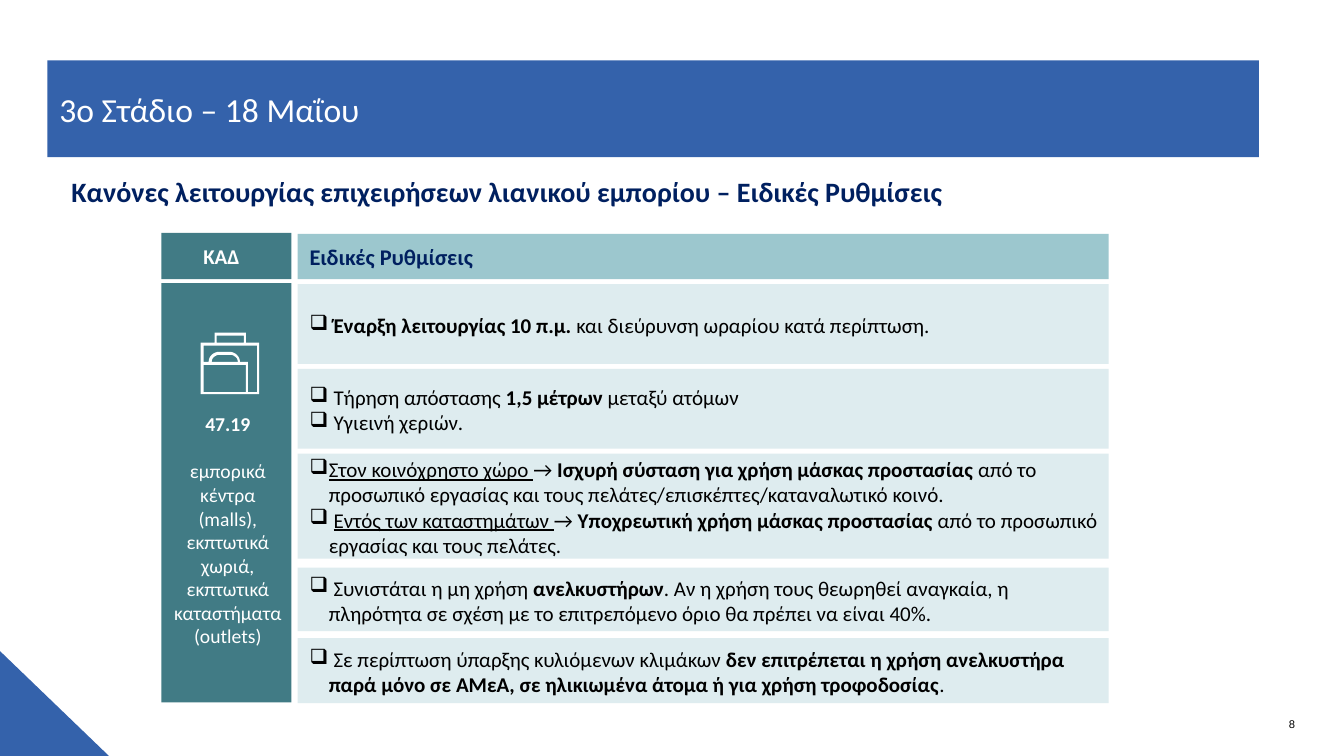
from math import cos, pi, sin

from lxml import etree
from pptx import Presentation
from pptx.dml.color import RGBColor
from pptx.enum.shapes import MSO_SHAPE
from pptx.enum.text import MSO_ANCHOR, PP_ALIGN
from pptx.oxml.ns import qn
from pptx.util import Pt

RECT, TRIANGLE = MSO_SHAPE.RECTANGLE, MSO_SHAPE.RIGHT_TRIANGLE
TOP, MIDDLE, BOTTOM = MSO_ANCHOR.TOP, MSO_ANCHOR.MIDDLE, MSO_ANCHOR.BOTTOM
LEFT, CENTER, RIGHT = PP_ALIGN.LEFT, PP_ALIGN.CENTER, PP_ALIGN.RIGHT

THEME = {
    "font": "Calibri", "number_font": "Arial",
    "blue": RGBColor(0x34, 0x62, 0xAB), "navy": RGBColor(0x00, 0x20, 0x60),
    "teal": RGBColor(0x41, 0x7B, 0x85), "aqua": RGBColor(0x9C, 0xC7, 0xCE),
    "pale": RGBColor(0xDE, 0xEC, 0xEF),
    "white": RGBColor(255, 255, 255), "black": RGBColor(0, 0, 0),
    "title": 24, "subtitle": 20, "header": 16, "body": 15, "code": 14, "number": 8,
}

prs = Presentation()
prs.slide_width, prs.slide_height = Pt(960), Pt(540)
slide = prs.slides.add_slide(prs.slide_layouts[5])


def add_box(kind, x, y, w, h, fill, insets=(0, 0, 0, 0), anchor=MIDDLE):
    """Add a filled shape, or a text box when kind is None; return the shape."""
    box = [Pt(v) for v in (x, y, w, h)]
    if kind is None:
        sp = slide.shapes.add_textbox(*box)
    else:
        sp = slide.shapes.add_shape(kind, *box)
        sp.shadow.inherit = False
        sp.fill.solid()
        sp.fill.fore_color.rgb = THEME[fill]
        sp.line.fill.background()
    tf = sp.text_frame
    tf.word_wrap = True
    tf.vertical_anchor = anchor
    tf.margin_left, tf.margin_top, tf.margin_right, tf.margin_bottom = map(Pt, insets)
    return sp


def add_run(p, text, size, color, bold=False, underline=False, font="font", align=LEFT):
    p.alignment = align
    r = p.add_run()
    r.text = text
    r.font.name = THEME[font]
    r.font.size = Pt(THEME[size])
    r.font.color.rgb = THEME[color]
    r.font.bold = bold
    r.font.underline = underline


# Corner triangle and page number
add_box(TRIANGLE, 0, 465.1, 77.8, 74.9, "blue")
number = add_box(None, 786.2, 511.2, 139, 10.8, None, anchor=BOTTOM)
add_run(number.text_frame.paragraphs[0], "8", "number", "black",
        font="number_font", align=RIGHT)

# Title banner with two snipped corners
title = slide.shapes.title
title.left, title.top, title.width, title.height = Pt(33.8), Pt(43.2), Pt(865.4), Pt(69.1)
geom = etree.SubElement(title._element.spPr, qn("a:prstGeom"), prst="snip2DiagRect")
etree.SubElement(geom, qn("a:avLst"))
title.fill.solid()
title.fill.fore_color.rgb = THEME["blue"]
tf = title.text_frame
tf.vertical_anchor = MIDDLE
tf.margin_left = tf.margin_right = Pt(8.6)
tf.margin_top = tf.margin_bottom = Pt(1.4)
add_run(tf.paragraphs[0], "3o Στάδιο – 18 Μαΐου", "title", "white")

# Subtitle
subtitle = add_box(None, 43.9, 121, 844.6, 31.7, None, (7.2, 3.6, 7.2, 3.6), TOP)
add_run(subtitle.text_frame.paragraphs[0],
        "Κανόνες λειτουργίας επιχειρήσεων λιανικού εμπορίου – Ειδικές Ρυθμίσεις",
        "subtitle", "navy", bold=True)

# Column headers
CODE_X, CODE_W = 115.2, 92.9
RULES_X, RULES_W = 212.6, 579.4
code_head = add_box(RECT, CODE_X, 166.3, CODE_W, 33.1, "teal", (30, 4.3, 4.3, 4.3))
add_run(code_head.text_frame.paragraphs[0], "ΚΑΔ", "body", "white", bold=True)
rules_head = add_box(RECT, RULES_X, 167, RULES_W, 32.4, "aqua", (8.6, 4.3, 5.8, 4.3))
add_run(rules_head.text_frame.paragraphs[0], "Ειδικές Ρυθμίσεις", "header", "navy", bold=True)

# Activity code column
code = add_box(RECT, CODE_X, 202.3, CODE_W, 299.5, "teal", (6.5, 92, 4.3, 4.3), TOP)
tf = code.text_frame
add_run(tf.paragraphs[0], "47.19", "code", "white", bold=True, align=CENTER)
p = tf.add_paragraph()
p.space_before = Pt(17)
add_run(p, "εμπορικά κέντρα (malls), εκπτωτικά χωριά, εκπτωτικά καταστήματα (outlets)",
        "code", "white", align=CENTER)

# Rule cards: top, height, items; a run is (text, style) with b bold, u underlined
cards = [
    (203, 57, [
        [(" Έναρξη λειτουργίας 10 π.μ. ", "b"), ("και διεύρυνση ωραρίου κατά περίπτωση.", "")]]),
    (263.5, 57, [
        [(" Τήρηση απόστασης ", ""), ("1,5 μέτρων ", "b"), ("μεταξύ ατόμων", "")],
        [(" Υγιεινή χεριών.", "")]]),
    (324, 75, [
        [("Στον κοινόχρηστο χώρο ", "u"), ("→ ", ""),
         ("Ισχυρή σύσταση για χρήση μάσκας προστασίας ", "b"),
         ("από το προσωπικό εργασίας και τους πελάτες/επισκέπτες/καταναλωτικό κοινό.", "")],
        [(" ", ""), ("Εντός των καταστημάτων ", "u"), ("→ ", ""),
         ("Υποχρεωτική χρήση μάσκας προστασίας ", "b"),
         ("από το προσωπικό εργασίας και τους πελάτες.", "")]]),
    (405.4, 45.4, [
        [(" Συνιστάται η μη χρήση ", ""), ("ανελκυστήρων", "b"),
         (". Αν η χρήση τους θεωρηθεί αναγκαία, η πληρότητα σε σχέση με το "
          "επιτρεπόμενο όριο θα πρέπει να είναι 40%.", "")]]),
    (455.8, 46.4, [
        [(" Σε περίπτωση ύπαρξης κυλιόμενων κλιμάκων ", ""),
         ("δεν επιτρέπεται η χρήση ανελκυστήρα παρά μόνο σε ΑΜεΑ, σε ηλικιωμένα "
          "άτομα ή για χρήση τροφοδοσίας", "b"), (".", "")]]),
]
HANG = Pt(13.7)
for top, height, items in cards:
    card = add_box(RECT, RULES_X, top, RULES_W, height, "pale", (8.6, 5.8, 5.8, 4.3))
    tf = card.text_frame
    for i, runs in enumerate(items):
        p = tf.paragraphs[0] if i == 0 else tf.add_paragraph()
        pPr = p._p.get_or_add_pPr()
        pPr.set("marL", str(HANG))
        pPr.set("indent", str(-HANG))
        etree.SubElement(pPr, qn("a:buChar"), char="❑")
        for text, style in runs:
            add_run(p, text, "body", "black", bold=style == "b", underline=style == "u")

# Shopping bag icon: outline with cut-outs, the flap edges being half-round arches
arches = []
for left, right, rx, ry in ((110, 370, 80, 70), (80, 390, 105, 100)):
    angles = [pi / 2 * i / 8 for i in range(9)]
    arches.append([(left + rx - rx * cos(a), 290 - ry * sin(a)) for a in angles]
                  + [(right - rx + rx * cos(a), 290 - ry * sin(a)) for a in reversed(angles)])
flap, flap_rim = arches
contours = [
    [(450, 100), (450, 0), (140, 0), (140, 100), (0, 100), (0, 610), (580, 610), (580, 100)],
    [(160, 30), (430, 30), (430, 100), (160, 100)],
    [(30, 590), (30, 320), (450, 320), (450, 590)],
    flap,
    [(560, 590), (470, 590), (470, 290), *reversed(flap_rim), (30, 290), (30, 130), (560, 130)],
]
builder = slide.shapes.build_freeform(*contours[0][0], scale=Pt(0.072))
for i, points in enumerate(contours):
    if i:
        builder.move_to(*points[0])
    builder.add_line_segments(points[1:], close=True)
bag = builder.convert_to_shape(Pt(143.3), Pt(237.6))
bag.shadow.inherit = False
bag.fill.solid()
bag.fill.fore_color.rgb = THEME["white"]
bag.line.fill.background()

prs.save("out.pptx")
